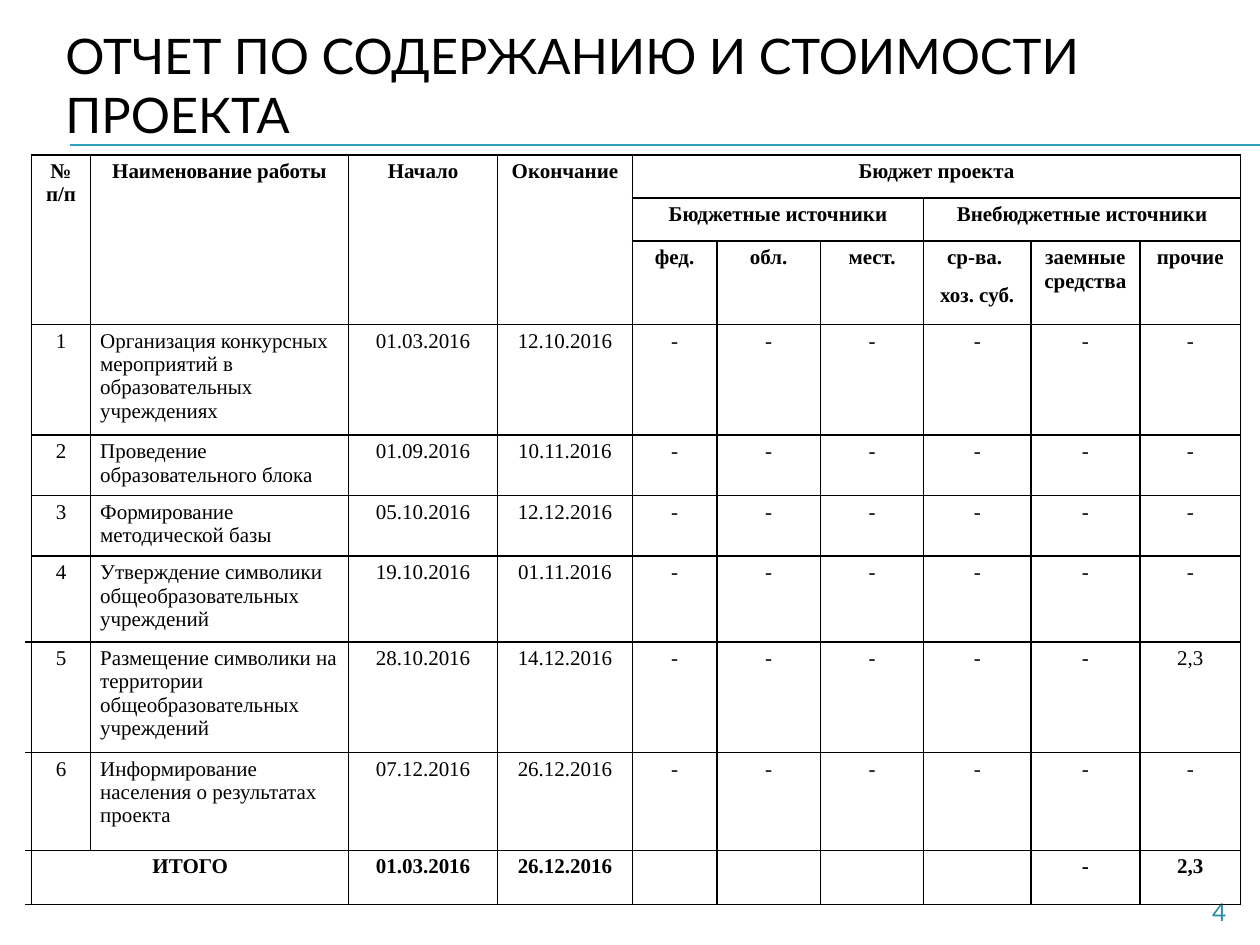
import lxml.etree
import pptx
import pptx.dml.color
import pptx.enum.shapes
import pptx.enum.text
import pptx.oxml.ns
import pptx.util

Cm = pptx.util.Cm
Pt = pptx.util.Pt
ALIGN = pptx.enum.text.PP_ALIGN
ANCHOR = pptx.enum.text.MSO_ANCHOR

COLUMN_WIDTHS = [0.13, 1.18, 5.21, 3, 2.72, 1.7, 2.09, 2.08, 2.16, 2.2, 2.03]
ROW_HEIGHTS = [0.87, 0.87, 1.68, 2.19, 1.22, 1.22, 1.69, 2.18, 1.97, 1.09]
HEADER_ROWS = 3
NAME_COLUMN = 2
FIRST_STUB_ROW = 6
MERGES = [((0, column), (2, column)) for column in range(1, 5)] + [
    ((0, 5), (0, 10)), ((1, 5), (1, 7)), ((1, 8), (1, 10)), ((9, 1), (9, 2))]

HEADERS = [
    ["", "№ п/п", "Наименование работы", "Начало", "Окончание", "Бюджет проекта"],
    [""] * 5 + ["Бюджетные источники", "", "", "Внебюджетные источники"],
    [""] * 5 + ["фед.", "обл.", "мест.", "ср-ва. \nхоз. суб.", "заемные средства", "прочие"],
]
WORKS = [
    ("Организация конкурсных мероприятий в образовательных учреждениях",
     "01.03.2016", "12.10.2016", "-"),
    ("Проведение образовательного блока", "01.09.2016", "10.11.2016", "-"),
    ("Формирование методической базы", "05.10.2016", "12.12.2016", "-"),
    ("Утверждение символики общеобразовательных учреждений",
     "19.10.2016", "01.11.2016", "-"),
    ("Размещение символики на территории общеобразовательных учреждений",
     "28.10.2016", "14.12.2016", "2,3"),
    ("Информирование населения о результатах проекта",
     "07.12.2016", "26.12.2016", "-"),
]
TOTAL = ["", "ИТОГО", "", "01.03.2016", "26.12.2016", "", "", "", "", "-", "2,3"]


def color(value):
    """Return the colour for a hex string."""
    return pptx.dml.color.RGBColor.from_string(value)


def style_font(font, name, size, value, bold=False):
    """Set the typeface, size, colour and weight of a font."""
    font.name = name
    font.size = Pt(size)
    font.bold = bold
    font.color.rgb = color(value)


def add_text(slide, box, text, size, value, align, anchor, bottom):
    """Place one paragraph of text in a box."""
    frame = slide.shapes.add_textbox(*map(Cm, box)).text_frame
    frame.word_wrap = True
    frame.vertical_anchor = anchor
    frame.margin_bottom = Cm(bottom)
    paragraph = frame.paragraphs[0]
    paragraph.text = text
    paragraph.alignment = align
    style_font(paragraph.font, "Lato", size, value)


def add_rules(slide, left, top, width):
    """Draw the double rule under the title."""
    for y in (top, top + 0.02):
        line = slide.shapes.add_connector(
            pptx.enum.shapes.MSO_CONNECTOR.STRAIGHT,
            Cm(left), Cm(y), Cm(left + width), Cm(y))
        line.line.color.rgb = color("2DA2BF")
        line.line.width = Pt(0.75)
        lxml.etree.SubElement(line._element.spPr, pptx.oxml.ns.qn("a:effectLst"))


def set_borders(cell, sides):
    """Give a cell black one-point borders on the named sides only."""
    properties = cell._tc.get_or_add_tcPr()
    for side in "LRTB":
        line = lxml.etree.SubElement(properties, pptx.oxml.ns.qn("a:ln" + side), w="12700")
        if side in sides:
            fill = lxml.etree.SubElement(line, pptx.oxml.ns.qn("a:solidFill"))
            lxml.etree.SubElement(fill, pptx.oxml.ns.qn("a:srgbClr"), val="000000")
        else:
            lxml.etree.SubElement(line, pptx.oxml.ns.qn("a:noFill"))


def spacer_sides(row):
    """Return the bordered sides of the narrow first column in a row."""
    if row < FIRST_STUB_ROW:
        return "R"
    return "RB" if row == FIRST_STUB_ROW else "RTB"


def fill_cell(cell, text, bold, align, sides, inset):
    """Write and format one table cell."""
    set_borders(cell, sides)
    cell.fill.background()
    cell.margin_left = cell.margin_right = Cm(inset)
    cell.margin_top = cell.margin_bottom = Cm(0.1)
    cell.text = text
    for paragraph in cell.text_frame.paragraphs:
        paragraph.alignment = align
        paragraph.line_spacing = 1.0
        paragraph.space_after = Pt(8)
        style_font(paragraph.font, "Times New Roman", 12, "000000", bold)


def add_budget_table(slide, left, top):
    """Build the table of works, dates and budget sources."""
    works = [["", str(number), name, start, end] + ["-"] * 5 + [other]
             for number, (name, start, end, other) in enumerate(WORKS, 1)]
    rows = HEADERS + works + [TOTAL]
    table = slide.shapes.add_table(
        len(rows), len(COLUMN_WIDTHS), Cm(left), Cm(top),
        Cm(sum(COLUMN_WIDTHS)), Cm(sum(ROW_HEIGHTS))).table
    table.first_row = table.horz_banding = False
    for column, width in zip(table.columns, COLUMN_WIDTHS):
        column.width = Cm(width)
    for row, height in zip(table.rows, ROW_HEIGHTS):
        row.height = Cm(height)
    for row, texts in enumerate(rows):
        is_work = HEADER_ROWS <= row < len(rows) - 1
        for column in range(len(COLUMN_WIDTHS)):
            text = texts[column] if column < len(texts) else ""
            align = ALIGN.LEFT if is_work and column == NAME_COLUMN else ALIGN.CENTER
            sides = "LRTB" if column else spacer_sides(row)
            fill_cell(table.cell(row, column), text, not is_work, align, sides,
                      0.2 if column else 0)
    for first, last in MERGES:
        table.cell(*first).merge(table.cell(*last))


def main():
    """Build and save the presentation."""
    presentation = pptx.Presentation()
    presentation.slide_width = Cm(25.4)
    presentation.slide_height = Cm(19.05)
    slide = presentation.slides.add_slide(presentation.slide_layouts[6])
    add_rules(slide, 1.42, 2.92, 23.98)
    add_text(slide, (1.3, 17.98, 23.67, 0.69), "4", 14, "268EA8",
             ALIGN.RIGHT, ANCHOR.BOTTOM, 0)
    add_text(slide, (1.07, 0.53, 24.13, 2.34),
             "ОТЧЕТ ПО СОДЕРЖАНИЮ И СТОИМОСТИ ПРОЕКТА", 28, "000000",
             ALIGN.LEFT, ANCHOR.MIDDLE, 0.13)
    add_budget_table(slide, 0.51, 3.12)
    presentation.save("out.pptx")


if __name__ == "__main__":
    main()
